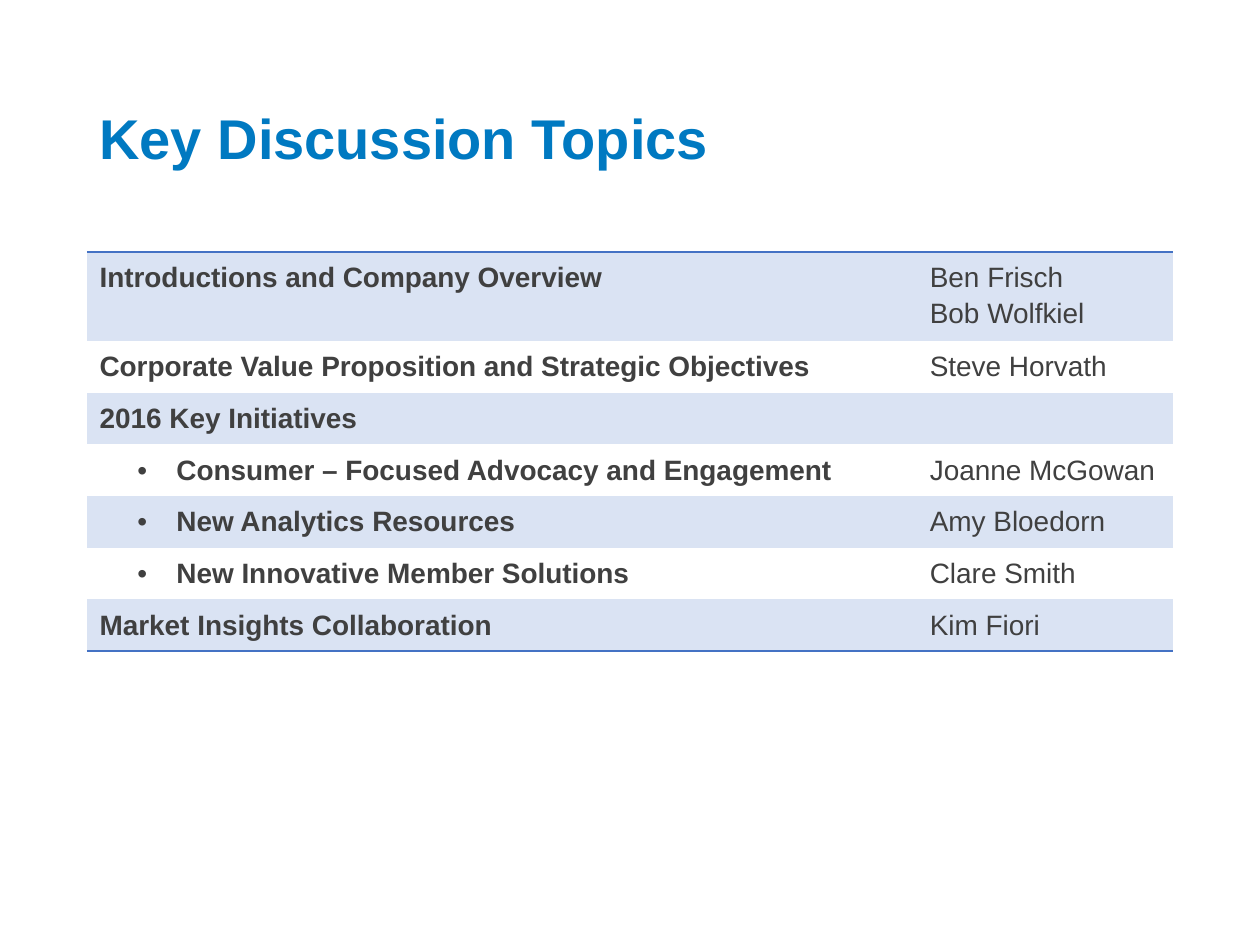
from pptx import Presentation
from pptx.dml.color import RGBColor
from pptx.enum.text import MSO_ANCHOR
from pptx.oxml import parse_xml
from pptx.oxml.ns import nsdecls, qn
from pptx.util import Inches, Pt

TITLE = "Key Discussion Topics"
# Topic, presenters, whether the topic is a bulleted sub-item
AGENDA = [
    ("Introductions and Company Overview", ["Ben Frisch", "Bob Wolfkiel"], False),
    ("Corporate Value Proposition and Strategic Objectives", ["Steve Horvath"], False),
    ("2016 Key Initiatives", [""], False),
    ("Consumer – Focused Advocacy and Engagement", ["Joanne McGowan"], True),
    ("New Analytics Resources", ["Amy Bloedorn"], True),
    ("New Innovative Member Solutions", ["Clare Smith"], True),
    ("Market Insights Collaboration", ["Kim Fiori"], False),
]

BLUE = RGBColor(0x00, 0x79, 0xC1)
GRAY = RGBColor(0x40, 0x40, 0x40)
BAND = RGBColor(0xDA, 0xE3, 0xF3)
RULE = RGBColor(0x44, 0x72, 0xC4)
NO_STYLE = "{2D5ABB26-0587-4C30-8999-92F81FD0307C}"

LEFT, WIDTH = 0.69, 8.62
COLUMNS = (6.09, 2.53)
ROW_H, LINE_H = 0.41, 0.27
TITLE_FONT = {"name": "Arial", "size": Pt(32), "bold": True}
TOPIC_FONT = {"name": "Arial", "size": Pt(16), "bold": True}
NAME_FONT = {**TOPIC_FONT, "bold": False}


def write(p, text, font, color, spacing, indent=(0, 0), bullet=False):
    p.line_spacing = spacing
    pPr = p._p.get_or_add_pPr()
    for key, value in zip(("marL", "indent"), indent):
        pPr.set(key, str(Inches(value)))
    if bullet:
        pPr.append(parse_xml(f'<a:buFont {nsdecls("a")} typeface="Arial"/>'))
        pPr.append(parse_xml(f'<a:buChar {nsdecls("a")} char="•"/>'))
    target = p
    if text:
        target = p.add_run()
        target.text = text
    for key, value in font.items():
        setattr(target.font, key, value)
    target.font.color.rgb = color


def add_rule(cell, side):
    cell._tc.get_or_add_tcPr().insert(0, parse_xml(
        f'<a:{side} {nsdecls("a")} w="{Pt(1)}"><a:solidFill>'
        f'<a:srgbClr val="{RULE}"/></a:solidFill></a:{side}>'))


prs = Presentation()
prs.slide_width, prs.slide_height = Inches(10), Inches(7.5)
s = prs.slides.add_slide(prs.slide_layouts[6])

# Title
tf = s.shapes.add_textbox(Inches(LEFT), Inches(0.4), Inches(WIDTH), Inches(1.45)).text_frame
tf.word_wrap = True
tf.vertical_anchor = MSO_ANCHOR.MIDDLE
write(tf.paragraphs[0], TITLE, TITLE_FONT, BLUE, 0.9)

# Agenda table
heights = [ROW_H + LINE_H * (len(names) - 1) for _, names, _ in AGENDA]
table = s.shapes.add_table(len(AGENDA), len(COLUMNS), Inches(LEFT), Inches(2),
                           Inches(WIDTH), Inches(sum(heights))).table
table.first_row = table.horz_banding = False
table._tbl.tblPr.find(qn("a:tableStyleId")).text = NO_STYLE
for column, width in zip(table.columns, COLUMNS):
    column.width = Inches(width)

for i, (topic, names, is_sub) in enumerate(AGENDA):
    table.rows[i].height = Inches(heights[i])
    topic_cell, name_cell = table.rows[i].cells
    write(topic_cell.text_frame.paragraphs[0], topic, TOPIC_FONT, GRAY, 1.14,
          (0.61, -0.31) if is_sub else (0, 0), is_sub)
    tf = name_cell.text_frame
    for j, name in enumerate(names):
        p = tf.add_paragraph() if j else tf.paragraphs[0]
        write(p, name, NAME_FONT, GRAY, 1.14, (0.5, 0))

    # Shaded bands, with a rule above the first row and below the last
    for cell in (topic_cell, name_cell):
        if i % 2 == 0:
            cell.fill.solid()
            cell.fill.fore_color.rgb = BAND
        else:
            cell.fill.background()
        if i == 0:
            add_rule(cell, "lnT")
        if i == len(AGENDA) - 1:
            add_rule(cell, "lnB")

prs.save("out.pptx")
